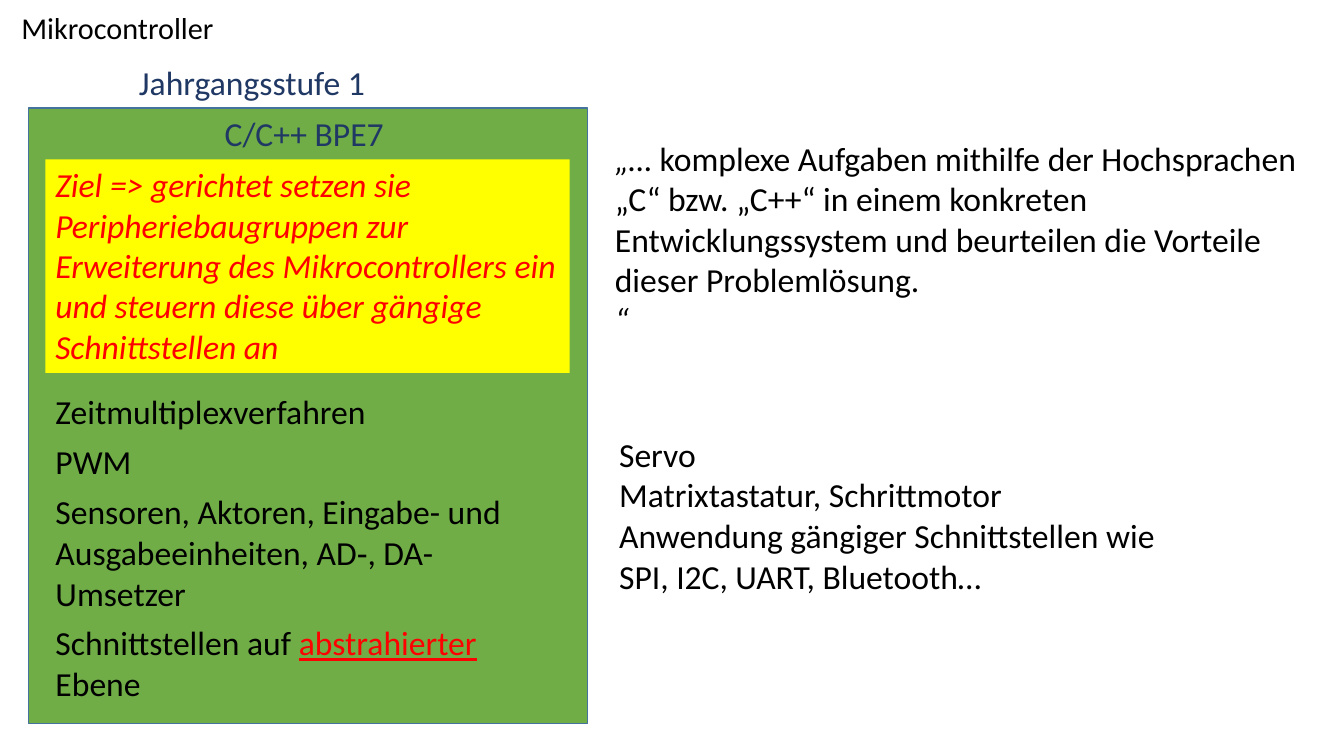
from dataclasses import dataclass
from typing import Any, NamedTuple, Optional

from pptx import Presentation
from pptx import util as u
from pptx.dml.color import RGBColor
from pptx.enum import shapes, text
from pptx.oxml.ns import qn

PX = 9144  # EMU, 100 px to the inch
FONT = "Calibri"
BLACK = RGBColor(0x00, 0x00, 0x00)
RED = RGBColor(0xFF, 0x00, 0x00)
NAVY = RGBColor(0x20, 0x38, 0x64)
BLUE = RGBColor(0x43, 0x73, 0x9E)
GREEN = RGBColor(0x70, 0xAD, 0x47)
YELLOW = RGBColor(0xFF, 0xFF, 0x00)
PLAIN = "{2D5ABB26-0587-4C30-8999-92F81FD0307C}"  # table style without lines

LEFT = text.PP_ALIGN.LEFT
MID = text.PP_ALIGN.CENTER


class Run(NamedTuple):
    words: str
    color: RGBColor = BLACK
    italic: bool = False
    under: bool = False


Para = list[Run]


@dataclass
class Box:
    area: tuple[int, int, int, int]
    paras: list[Para]
    align: Any = LEFT
    fill: Optional[RGBColor] = None
    line: Optional[RGBColor] = None
    wrap: bool = True


@dataclass
class Grid:
    area: tuple[int, int, int]
    rows: list[tuple[int, Para]]
    pad: tuple[int, int] = (10, 5)


def px(*nums: int) -> list[u.Emu]:
    return [u.Emu(n * PX) for n in nums]


def write(frame: Any, paras: list[Para], *, size: float = 24,
          align: Any = LEFT, wrap: bool = True) -> None:
    """Fill a text frame; a newline inside a run becomes a line break."""
    frame.word_wrap = wrap
    for i, runs in enumerate(paras):
        para = frame.add_paragraph() if i else frame.paragraphs[0]
        para.alignment = align
        for item in runs:
            for j, words in enumerate(item.words.split("\n")):
                if j:
                    para.add_line_break()
                run = para.add_run()
                run.text = words
                font = run.font
                font.name, font.size = FONT, u.Pt(size)
                font.color.rgb = item.color
                font.italic, font.underline = item.italic, item.under


def add_box(slide: Any, box: Box) -> None:
    if box.fill is None:
        shape = slide.shapes.add_textbox(*px(*box.area))
    else:
        shape = slide.shapes.add_shape(shapes.MSO_SHAPE.RECTANGLE, *px(*box.area))
        shape.shadow.inherit = False
        shape.fill.solid()
        shape.fill.fore_color.rgb = box.fill
        if box.line is None:
            shape.line.fill.background()
        else:
            shape.line.color.rgb = box.line
            shape.line.width = u.Pt(1)
    shape.text_frame.vertical_anchor = text.MSO_ANCHOR.TOP
    write(shape.text_frame, box.paras, align=box.align, wrap=box.wrap)


def add_grid(slide: Any, grid: Grid) -> None:
    high = sum(tall for tall, _ in grid.rows)
    frame = slide.shapes.add_table(len(grid.rows), 1, *px(*grid.area, high))
    table = frame.table
    table.first_row = table.horz_banding = False
    table._tbl.tblPr.find(qn("a:tableStyleId")).text = PLAIN
    side, edge = px(*grid.pad)
    for i, (tall, runs) in enumerate(grid.rows):
        table.rows[i].height = u.Emu(tall * PX)
        cell = table.cell(i, 0)
        cell.fill.background()
        cell.margin_left = cell.margin_right = side
        cell.margin_top = cell.margin_bottom = edge
        cell.vertical_anchor = text.MSO_ANCHOR.MIDDLE
        write(cell.text_frame, [runs])


def add_title(slide: Any, words: str) -> None:
    title = slide.shapes.title
    title.left, title.top, title.width, title.height = px(0, 0, 250, 60)
    frame = title.text_frame
    frame.auto_size = text.MSO_AUTO_SIZE.NONE
    frame.vertical_anchor = text.MSO_ANCHOR.MIDDLE
    frame.margin_right, frame.margin_bottom = px(27, 11)
    write(frame, [[Run(words)]], size=21.6, align=MID)


BOXES = [
    Box((28, 107, 555, 611), [[Run("C/C++ BPE7 ", NAVY)]], MID, GREEN, BLUE),
    Box((127, 57, 246, 50), [[Run("Jahrgangsstufe 1", NAVY)]], MID, wrap=False),
    Box((45, 158, 520, 212), [[Run(
        "Ziel => gerichtet setzen sie Peripheriebaugruppen zur Erweiterung des "
        "Mikrocontrollers ein und steuern diese über gängige Schnittstellen an",
        RED, italic=True)]], fill=YELLOW),
    Box((600, 132, 721, 212), [
        [Run("„… ", italic=True),
         Run("komplexe Aufgaben mithilfe der Hochsprachen „C“ bzw. „C++“ in einem "
             "konkreten Entwicklungssystem und beurteilen die Vorteile dieser "
             "Problemlösung.")],
        [Run("“", italic=True)],
    ]),
]

GRIDS = [
    Grid((614, 432, 575), [
        (40, [Run("Servo")]),
        (40, [Run("Matrixtastatur, Schrittmotor")]),
        (80, [Run("Anwendung gängiger Schnittstellen wie \n"
                  "SPI, I2C, UART, Bluetooth…")]),
    ], pad=(0, 0)),
    Grid((45, 384, 520), [
        (50, [Run("Zeitmultiplexverfahren")]),
        (50, [Run("PWM")]),
        (130, [Run("Sensoren, Aktoren, Eingabe- und Ausgabeeinheiten, "
                   "AD‑, DA-Umsetzer")]),
        (90, [Run("Schnittstellen auf "), Run("abstrahierter", RED, under=True),
              Run(" Ebene")]),
    ]),
]


def main() -> None:
    deck = Presentation()
    deck.slide_width, deck.slide_height = px(1333, 750)
    slide = deck.slides.add_slide(deck.slide_layouts.get_by_name("Title Only"))
    add_title(slide, "Mikrocontroller")
    for box in BOXES:
        add_box(slide, box)
    for grid in GRIDS:
        add_grid(slide, grid)
    deck.save("out.pptx")


if __name__ == "__main__":
    main()
